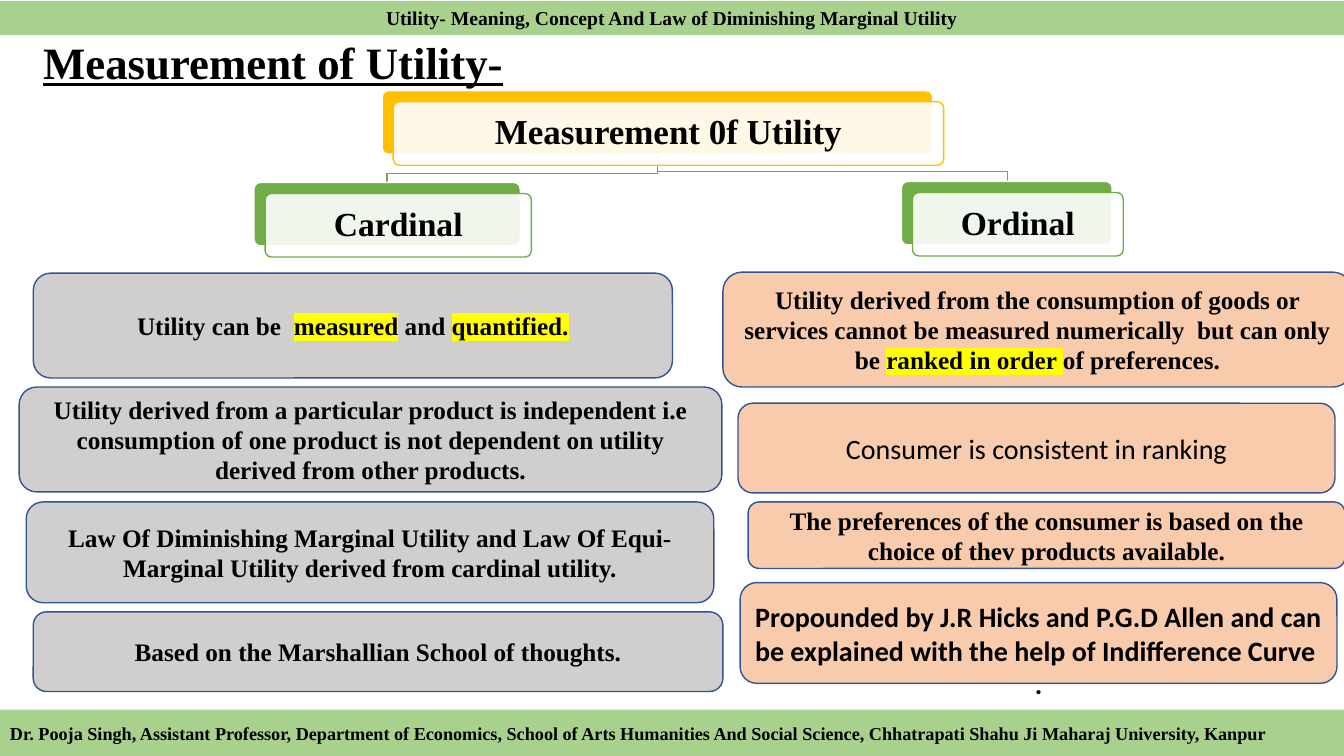
from lxml import etree
from pptx import Presentation
from pptx.dml.color import RGBColor
from pptx.enum.shapes import MSO_SHAPE
from pptx.enum.text import MSO_ANCHOR, PP_ALIGN
from pptx.oxml.ns import qn
from pptx.util import Inches, Pt

RECT, ROUND = MSO_SHAPE.RECTANGLE, MSO_SHAPE.ROUNDED_RECTANGLE
LEFT, CENTER = PP_ALIGN.LEFT, PP_ALIGN.CENTER
TOP, MIDDLE = MSO_ANCHOR.TOP, MSO_ANCHOR.MIDDLE
SERIF, SANS = "Times New Roman", "Calibri"
COLORS = {
    "text": "000000", "white": "FFFFFF", "band": "A9D18E", "gold": "FFC000",
    "green": "70AD47", "cardinal": "D0CECE", "ordinal": "F8CBAD",
    "outline": "325491", "marker": "FFFF00",
}


def rgb(name):
    return RGBColor.from_string(COLORS[name])


class UtilitySlide:
    def __init__(self, prs):
        self.s = prs.slides.add_slide(prs.slide_layouts[6])

    def label(self, sp, parts, size, font=SERIF, bold=True, align=CENTER, anchor=MIDDLE):
        """Fill a shape with runs; every second part is highlighted."""
        tf = sp.text_frame
        tf.word_wrap = True
        tf.vertical_anchor = anchor
        p = tf.paragraphs[0]
        p.alignment = align
        for i, part in enumerate(parts):
            r = p.add_run()
            r.text = part
            r.font.size, r.font.name, r.font.bold = Pt(size), font, bold
            r.font.color.rgb = rgb("text")
            if i % 2:
                highlight = etree.Element(qn("a:highlight"))
                etree.SubElement(highlight, qn("a:srgbClr"), val=COLORS["marker"])
                r.font._element.find(qn("a:solidFill")).addnext(highlight)
        return p

    def shape(self, kind, box, fill, line=None, radius=None, alpha=None):
        sp = self.s.shapes.add_shape(kind, *map(Inches, box))
        sp.shadow.inherit = False
        sp.fill.solid()
        sp.fill.fore_color.rgb = rgb(fill)
        if alpha:
            color = sp._element.spPr.find(qn("a:solidFill"))[0]
            etree.SubElement(color, qn("a:alpha"), val=str(alpha * 1000))
        if line:
            sp.line.color.rgb = rgb(line)
            sp.line.width = Pt(1)
        else:
            sp.line.fill.background()
        if radius:
            sp.adjustments[0] = radius
        return sp

    def title(self, text, box):
        sp = self.s.shapes.add_textbox(*map(Inches, box))
        p = self.label(sp, [text], 32, align=LEFT)
        p.line_spacing = 0.9
        p.runs[0].font.underline = True

    def band(self, text, top, height, size, align, anchor):
        sp = self.shape(RECT, (0, top, 13.33, height), "band")
        self.label(sp, [text], size, align=align, anchor=anchor)

    def branch(self, points):
        start, *rest = [(Inches(x), Inches(y)) for x, y in points]
        builder = self.s.shapes.build_freeform(*start)
        builder.add_line_segments(rest, close=False)
        sp = builder.convert_to_shape()
        sp.shadow.inherit = False
        sp.fill.background()
        sp.line.color.rgb = rgb("green")
        sp.line.width = Pt(1)

    def node(self, text, left, top, width, color, size):
        """Coloured plate with a translucent label card offset over it."""
        self.shape(ROUND, (left, top, width, 0.63), color, "white", 0.1)
        card = self.shape(ROUND, (left + 0.11, top + 0.11, width, 0.63),
                          "white", color, 0.1, alpha=90)
        self.label(card, [text], size).line_spacing = 0.9

    def card(self, parts, box, fill, size=18, font=SERIF, bold=True, top_inset=None):
        sp = self.shape(ROUND, box, fill, "outline")
        self.label(sp, parts, size, font, bold, anchor=TOP if top_inset else MIDDLE)
        if top_inset:
            sp.text_frame.margin_top = Inches(top_inset)


def main():
    prs = Presentation()
    prs.slide_width, prs.slide_height = Inches(13.33), Inches(7.5)
    s = UtilitySlide(prs)

    s.title("Measurement of Utility-", (0.33, 0.35, 11.04, 0.59))
    for x, bend, end in ((9.99, 1.7, 1.8), (3.84, 1.72, 1.81)):
        s.branch([(6.52, 1.53), (6.52, bend), (x, bend), (x, end)])
    s.node("Measurement 0f Utility", 3.79, 0.9, 5.46, "gold", 25)
    s.node("Cardinal", 2.52, 1.81, 2.64, "green", 24)
    s.node("Ordinal", 8.94, 1.8, 2.09, "green", 24)

    cardinal = [
        (["Utility can be  ", "measured", " and ", "quantified."], (0.33, 2.71, 6.34, 1.04)),
        (["Utility derived from a particular product is independent i.e consumption of one "
          "product is not dependent on utility derived from other products."],
         (0.19, 3.84, 6.97, 1.04)),
        (["Law Of Diminishing Marginal Utility and Law Of Equi-Marginal Utility derived "
          "from cardinal utility."], (0.26, 4.98, 6.82, 1)),
        (["Based on the Marshallian School of thoughts."], (0.33, 6.07, 6.84, 0.79)),
    ]
    for parts, box in cardinal:
        s.card(parts, box, "cardinal")

    s.card(["Utility derived from the consumption of goods or services cannot be measured "
            "numerically  but can only be ", "ranked in order ", "of preferences."],
           (7.17, 2.7, 6.24, 1.14), "ordinal")
    s.card(["Consumer is consistent in ranking"], (7.32, 4, 5.92, 0.89), "ordinal",
           20, SANS, bold=False)
    s.card(["The preferences of the consumer is based on the choice of thev products "
            "available."], (7.42, 4.98, 5.92, 0.66), "ordinal")
    s.card(["Propounded by J.R Hicks and P.G.D Allen and can be explained with the help of "
            "Indifference Curve  ."], (7.34, 5.78, 5.92, 1), "ordinal", 20, SANS,
           top_inset=0.12)

    s.band("Utility- Meaning, Concept And Law of Diminishing Marginal Utility",
           0.01, 0.34, 14, CENTER, TOP)
    s.band("Dr. Pooja Singh, Assistant Professor, Department of Economics, School of Arts "
           "Humanities And Social Science, Chhatrapati Shahu Ji Maharaj University, Kanpur",
           7.04, 0.46, 13, LEFT, MIDDLE)
    prs.save("out.pptx")


if __name__ == "__main__":
    main()
